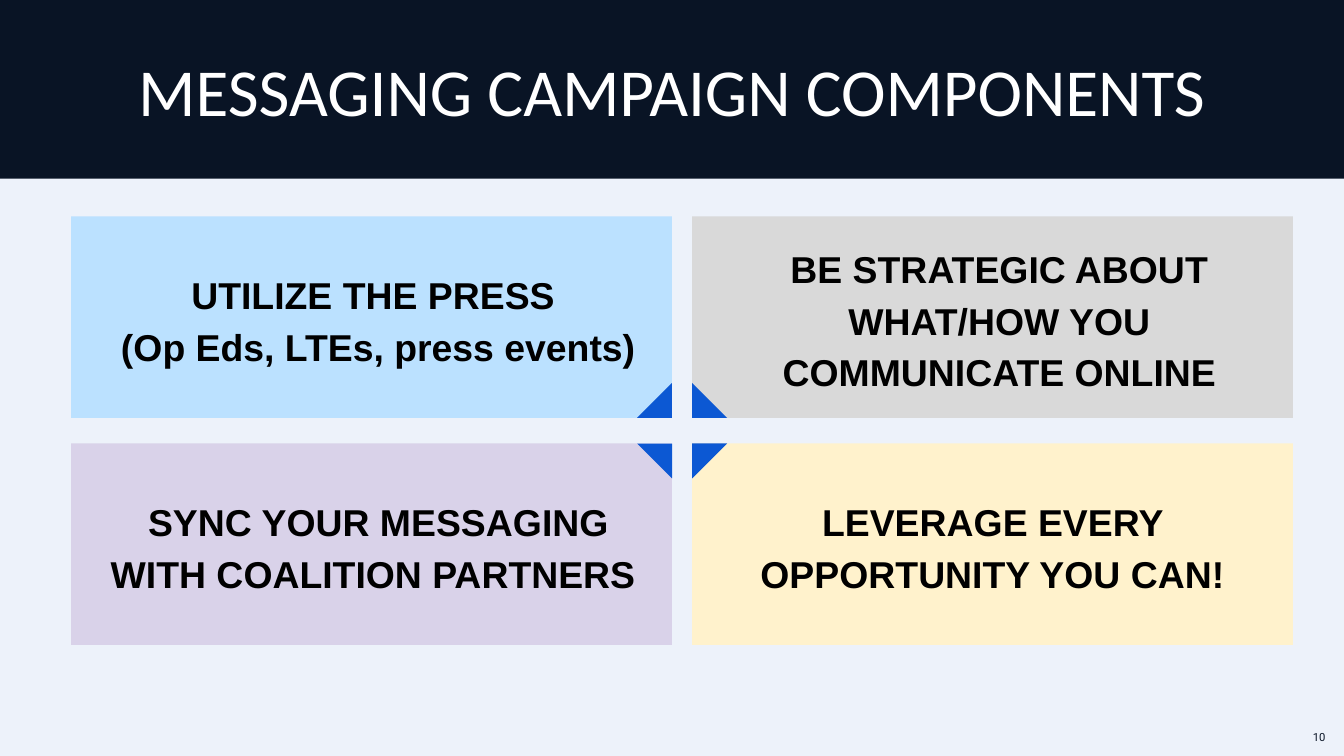
from pptx import Presentation
from pptx.dml.color import RGBColor
from pptx.enum.shapes import MSO_SHAPE
from pptx.enum.text import MSO_ANCHOR, PP_ALIGN
from pptx.util import Inches, Pt

RECT, TRIANGLE = MSO_SHAPE.RECTANGLE, MSO_SHAPE.RIGHT_TRIANGLE
MIDDLE = MSO_ANCHOR.MIDDLE
CENTER, RIGHT = PP_ALIGN.CENTER, PP_ALIGN.RIGHT

COLORS = {
    "background": "EDF2FA",
    "navy": "091425",
    "white": "FFFFFF",
    "black": "000000",
    "accent": "0C58D3",
    "press": "BBE1FF",
    "online": "D9D9D9",
    "partners": "D9D2E9",
    "opportunity": "FFF2CC",
}
SLIDE_W = 10
SLIDE_H = SLIDE_W * 9 / 16
CARD_W, CARD_H = 4.47, 1.5
COLUMNS, ROWS = (0.53, 5.15), (1.61, 3.3)
CORNER = 0.26

CARDS = [
    (0, 0, "press", ["UTILIZE THE PRESS ", "(Op Eds, LTEs, press events)"], 0.1, 270),
    (1, 0, "online", ["BE STRATEGIC ABOUT WHAT/HOW YOU COMMUNICATE ONLINE"], 0.1, 0),
    (0, 1, "partners", ["SYNC YOUR MESSAGING WITH COALITION PARTNERS "], 0.1, 180),
    (1, 1, "opportunity", ["LEVERAGE EVERY OPPORTUNITY YOU CAN!"], 0.2, 90),
]


class SlideBuilder:
    def __init__(self, slide):
        self.slide = slide

    def color(self, name):
        return RGBColor.from_string(COLORS[name])

    def background(self, name):
        fill = self.slide.background.fill
        fill.solid()
        fill.fore_color.rgb = self.color(name)

    def shape(self, kind, x, y, w, h, fill, rotation=0):
        sp = self.slide.shapes.add_shape(kind, Inches(x), Inches(y), Inches(w), Inches(h))
        sp.shadow.inherit = False
        sp.fill.solid()
        sp.fill.fore_color.rgb = self.color(fill)
        sp.line.fill.background()
        sp.rotation = rotation
        return sp

    def text(self, sp, lines, size, font, color, align=CENTER, bold=False,
             spacing=1.0, left=0.1, right=0.1):
        tf = sp.text_frame
        tf.word_wrap = True
        tf.vertical_anchor = MIDDLE
        tf.margin_left, tf.margin_right = Inches(left), Inches(right)
        tf.margin_top = tf.margin_bottom = Inches(0.1)
        for i, line in enumerate(lines):
            p = tf.paragraphs[0] if i == 0 else tf.add_paragraph()
            p.text = line
            p.alignment = align
            p.line_spacing = spacing
            p.font.size = Pt(size)
            p.font.name = font
            p.font.bold = bold
            p.font.color.rgb = self.color(color)

    def title(self, title):
        sp = self.shape(RECT, 0, 0, SLIDE_W, 1.33, "navy")
        self.text(sp, [title], 36, "Calibri", "white")

    def card(self, col, row, fill, lines, right, rotation):
        x, y = COLUMNS[col], ROWS[row]
        sp = self.shape(RECT, x, y, CARD_W, CARD_H, fill)
        self.text(sp, lines, 20, "Arial", "black", bold=True, spacing=1.15,
                  left=0.2, right=right)
        corner_x = x + (1 - col) * (CARD_W - CORNER)
        corner_y = y + (1 - row) * (CARD_H - CORNER)
        self.shape(TRIANGLE, corner_x, corner_y, CORNER, CORNER, "accent", rotation)

    def page_number(self, number):
        sp = self.slide.shapes.add_textbox(Inches(9.36), Inches(5.27), Inches(0.6), Inches(0.43))
        self.text(sp, [number], 6, "Roboto", "navy", align=RIGHT)


def main():
    prs = Presentation()
    prs.slide_width, prs.slide_height = Inches(SLIDE_W), Inches(SLIDE_H)
    s = SlideBuilder(prs.slides.add_slide(prs.slide_layouts[6]))
    s.background("background")
    s.title("MESSAGING CAMPAIGN COMPONENTS")
    for card in CARDS:
        s.card(*card)
    s.page_number("10")
    prs.save("out.pptx")


if __name__ == "__main__":
    main()
